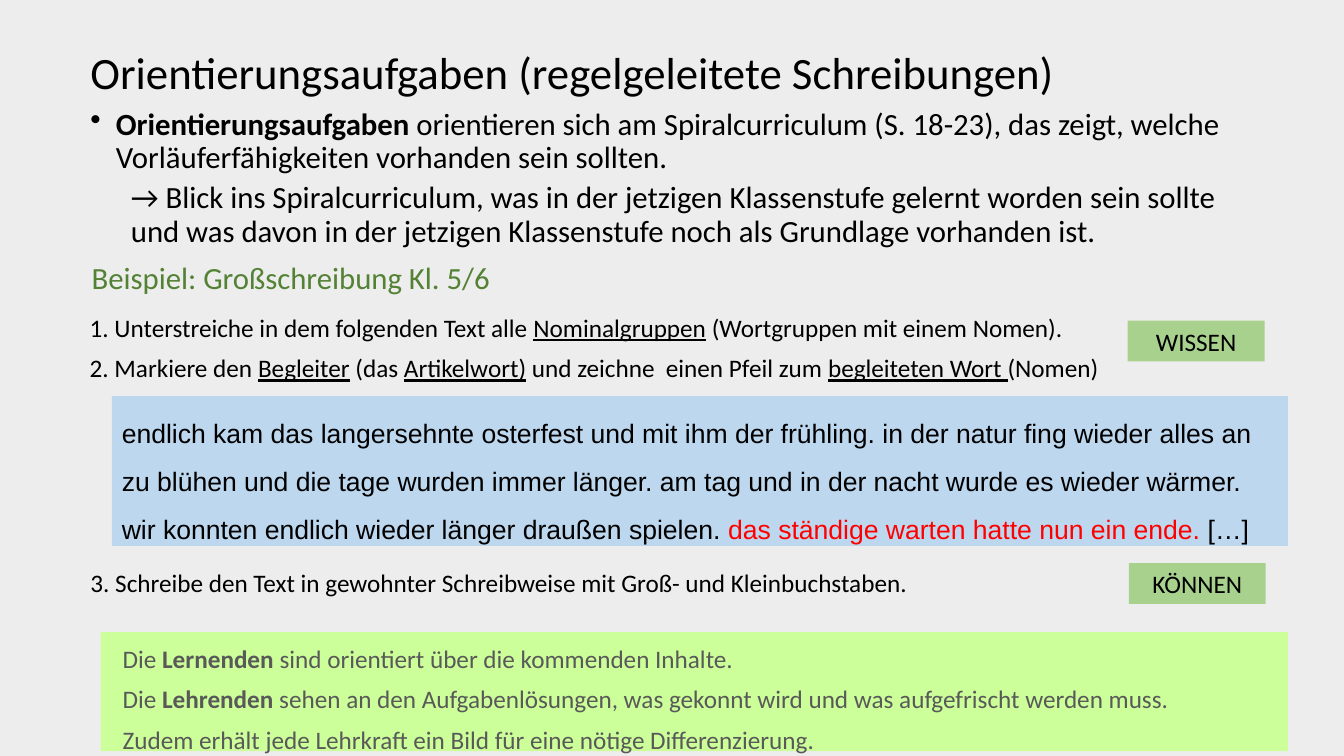
"""Build the slide on orientation tasks for rule-based spelling."""
from dataclasses import dataclass

import pptx
import pptx.dml.color
import pptx.enum.shapes
import pptx.enum.text
import pptx.util
from lxml import etree

Cm, Pt = pptx.util.Cm, pptx.util.Pt
Align, Anchor = pptx.enum.text.PP_ALIGN, pptx.enum.text.MSO_ANCHOR


@dataclass
class Theme:
    back: str = "EDEDED"
    ink: str = "000000"
    grey: str = "595959"
    red: str = "FF0000"
    green: str = "548235"
    blue: str = "BDD7EE"
    lime: str = "CCFF99"
    tag: str = "A9D18E"
    font: str = "Calibri"
    sans: str = "Arial"
    head: int = 32
    lead: int = 22
    quote: int = 19
    task: int = 18


theme = Theme()


def rgb(code):
    return pptx.dml.color.RGBColor.from_string(code)


def add_text(place, paras, size, color=theme.ink, fill=None, name=theme.font,
             anchor=Anchor.TOP, form=None):
    """Add a text box or filled box; each paragraph is a list of (text, format)."""
    area = [Cm(n) for n in place]
    if fill:
        box = slide.shapes.add_shape(pptx.enum.shapes.MSO_SHAPE.RECTANGLE, *area)
        box.shadow.inherit = False
        box.fill.solid()
        box.fill.fore_color.rgb = rgb(fill)
        box.line.fill.background()
    else:
        box = slide.shapes.add_textbox(*area)
    frame = box.text_frame
    frame.word_wrap = True
    frame.vertical_anchor = anchor
    for i, parts in enumerate(paras):
        para = frame.paragraphs[0] if i == 0 else frame.add_paragraph()
        for key, value in {"alignment": Align.LEFT, **(form or {})}.items():
            setattr(para, key, value)
        for text, style in parts:
            run = para.add_run()
            run.text = text
            look = {"name": name, "size": Pt(size), **style}
            run.font.color.rgb = rgb(look.pop("color", color))
            for key, value in look.items():
                setattr(run.font, key, value)
    return frame


deck = pptx.Presentation()
deck.slide_width, deck.slide_height = Cm(33.87), Cm(19.05)
slide = deck.slides.add_slide(deck.slide_layouts[6])
slide.background.fill.solid()
slide.background.fill.fore_color.rgb = rgb(theme.back)

plain, bold, under = {}, {"bold": True}, {"underline": True}
loose = {"line_spacing": 1.2, "space_before": Pt(3)}

add_text((2.03, 0.89, 29.21, 2), [[("Orientierungsaufgaben (regelgeleitete Schreibungen)", plain)]],
         theme.head, anchor=Anchor.MIDDLE, form={"line_spacing": 0.9})

lead = add_text((2.03, 2.62, 29.21, 3.96), [
    [("Orientierungsaufgaben", bold),
     (" orientieren sich am Spiralcurriculum (S. 18-23), das zeigt, welche "
      "Vorläuferfähigkeiten vorhanden sein sollten.", plain)],
    [("→ Blick ins Spiralcurriculum, was in der jetzigen Klassenstufe gelernt worden sein sollte "
      "und was davon in der jetzigen Klassenstufe noch als Grundlage vorhanden ist.", plain)],
], theme.lead, form={"line_spacing": 0.9})
for para, gap, left, hang, mark in zip(lead.paragraphs, (10, 5), (0.64, 1.02), (-0.64, 0), ("•", "")):
    para.space_before = Pt(gap)
    props = para._p.get_or_add_pPr()
    props.set("marL", str(Cm(left)))
    props.set("indent", str(Cm(hang)))
    if mark:
        bullet = etree.SubElement(props, pptx.oxml.ns.qn("a:buChar"))
        bullet.set("char", mark)

add_text((2.06, 6.4, 26.39, 1.19), [[("Beispiel: Großschreibung Kl. 5/6", plain)]],
         theme.lead, theme.green)

add_text((2.01, 7.59, 26.39, 2.01), [
    [("1. Unterstreiche in dem folgenden Text alle ", plain), ("Nominalgruppen", under),
     (" (Wortgruppen mit einem Nomen).", plain)],
    [("2. Markiere den ", plain), ("Begleiter", under), (" (das ", plain),
     ("Artikelwort)", under), (" und zeichne  einen Pfeil zum ", plain),
     ("begleiteten Wort ", under), ("(Nomen)", plain)],
], theme.task, form=loose)

add_text((2.82, 9.98, 29.64, 3.78), [
    [("endlich kam das langersehnte osterfest und mit ihm der frühling. in der natur fing wieder "
      "alles an zu blühen und die tage wurden immer länger. am tag und in der nacht wurde es "
      "wieder wärmer. wir konnten endlich wieder länger draußen spielen. ", plain),
     ("das ständige warten hatte nun ein ende.", {"color": theme.red}), (" […]", plain)],
], theme.quote, fill=theme.blue, name=theme.sans,
    form={"line_spacing": 1.5, "space_after": Pt(8)})

add_text((2.03, 14.17, 30.66, 1.02), [
    [("3. Schreibe den Text in gewohnter Schreibweise mit Groß- und Kleinbuchstaben.", plain)],
], theme.task)

goals = add_text((2.54, 15.93, 29.92, 3), [
    [("Die ", plain), ("Lernenden", bold), (" sind orientiert über die kommenden Inhalte.", plain)],
    [("Die", plain), (" Lehrenden ", bold),
     ("sehen an den Aufgabenlösungen, was gekonnt wird und was aufgefrischt werden muss.", plain)],
    [("Zudem erhält jede Lehrkraft ein Bild für eine nötige Differenzierung.", plain)],
], theme.task, theme.grey, theme.lime, form=loose)
for para in goals.paragraphs:
    para._p.get_or_add_pPr().set("marL", str(Cm(0.3)))

for label, left, top in (("WISSEN", 28.42, 8.08), ("KÖNNEN", 28.45, 14.19)):
    add_text((left, top, 3.45, 1.03), [[(label, plain)]], theme.task, fill=theme.tag,
             anchor=Anchor.MIDDLE, form={"alignment": Align.CENTER})

deck.save("out.pptx")
